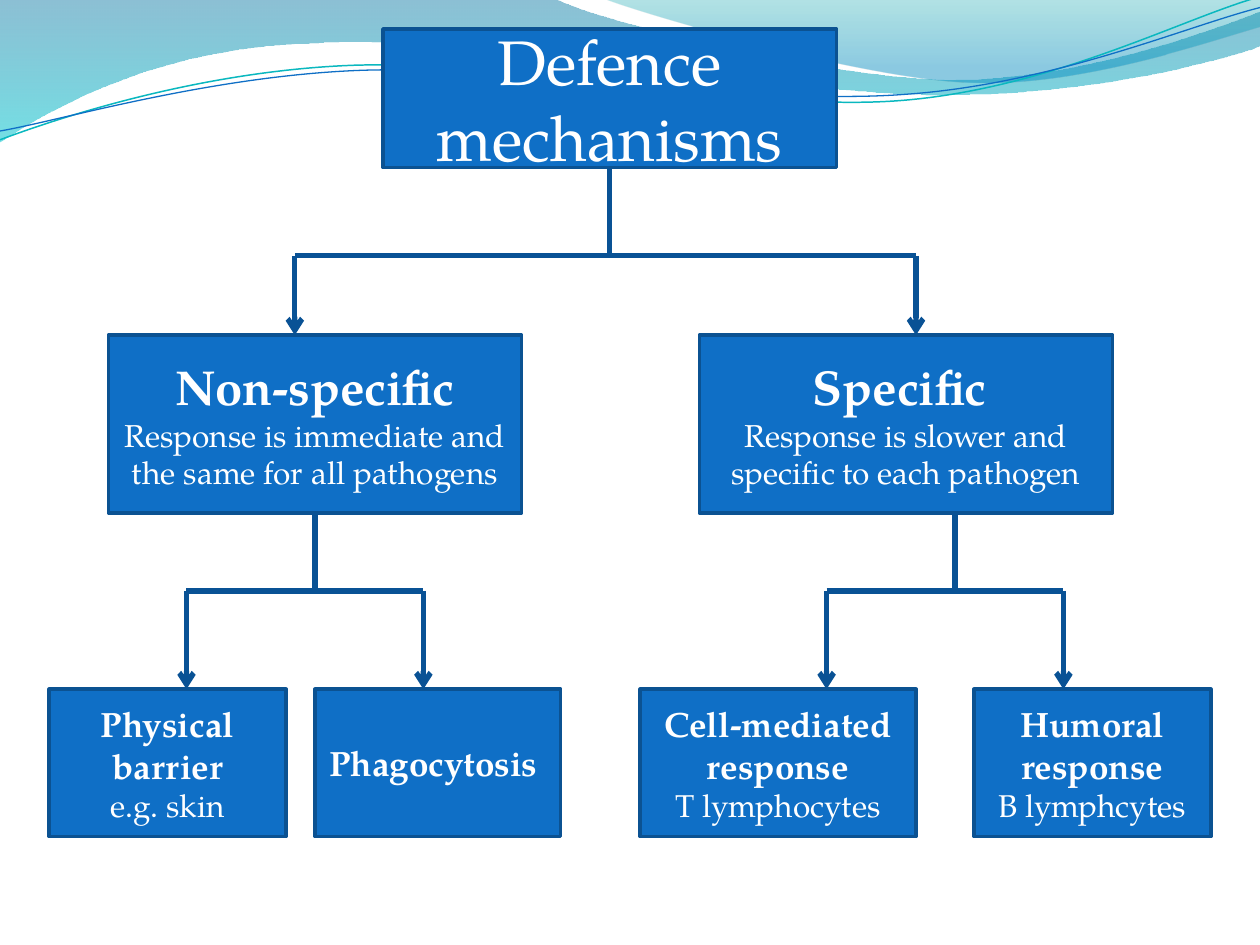
from lxml import etree
from pptx import Presentation
from pptx.dml.color import RGBColor
from pptx.enum.shapes import MSO_CONNECTOR, MSO_SHAPE
from pptx.enum.text import MSO_ANCHOR, PP_ALIGN
from pptx.oxml.ns import qn
from pptx.util import Inches, Pt

PROCESS = MSO_SHAPE.FLOWCHART_PROCESS
STRAIGHT = MSO_CONNECTOR.STRAIGHT
MIDDLE = MSO_ANCHOR.MIDDLE
CENTER = PP_ALIGN.CENTER

FONT = "TeX Gyre Pagella"
COLORS = {
    "box": "0F6FC6", "border": "0B5292", "arrow": "095295", "text": "FFFFFF",
    "teal line": "0AB8BF", "blue line": "0F6FC6",
    "deep blue": "0074A1", "cyan": "00C6CF", "teal": "00A1A9", "sky": "008BBF",
}

FILLED_WAVES = [
    ([(0, 0), (4.4, -0.01),
      (4.76, 0.17, 6.64, 0.63, 7.58, 0.63), (8.53, 0.63, 9.58, 0.26, 10, 0.09),
      (10.01, 0.36),
      (9.83, 0.44, 8.7, 0.76, 7.46, 0.75), (6.22, 0.75, 3.82, 0.28, 2.57, 0.34),
      (1.29, 0.36, 0.46, 0.83, -0.01, 1.13)],
     [(0, "deep blue", 45), (1, "cyan", 55)]),
    ([(4.79, -0.01),
      (5.09, 0.11, 6.82, 0.62, 7.69, 0.65), (8.56, 0.69, 9.61, 0.32, 10, 0.21),
      (10, 0)],
     [(0, "teal", 30), (0.8, "sky", 45)]),
]
LINE_WAVES = [
    ([(0, 1.11), (0.48, 0.93, 1.58, 0.57, 2.77, 0.52),
      (3.95, 0.47, 5.93, 0.89, 7.13, 0.8), (8.33, 0.71, 9.38, 0.15, 9.98, -0.02)],
     "teal line", 0.85),
    ([(0, 1.04), (0.47, 0.96, 1.64, 0.61, 2.83, 0.56),
      (4.03, 0.51, 5.97, 0.84, 7.17, 0.75), (8.36, 0.67, 9.41, 0.21, 10, 0.06)],
     "blue line", 0.75),
]

LEVELS = {
    "root": {"top": 0.23, "height": 1.1, "size": 36, "bold": False},
    "branch": {"top": 2.66, "height": 1.41, "size": 28, "bold": True},
    "leaf": {"top": 5.47, "height": 1.17, "size": 20, "bold": True},
}
DETAIL_SIZE = 18
BOXES = [
    ("root", 3.04, 3.6, "Defence mechanisms", ""),
    ("branch", 0.86, 3.28, "Non-specific",
     "Response is immediate and the same for all pathogens"),
    ("branch", 5.55, 3.28, "Specific ",
     "Response is slower and specific to each pathogen"),
    ("leaf", 0.39, 1.88, "Physical barrier", "e.g. skin"),
    ("leaf", 2.5, 1.95, "Phagocytosis ", ""),
    ("leaf", 5.08, 2.19, "Cell-mediated response", "T lymphocytes"),
    ("leaf", 7.73, 1.88, "Humoral response", "B lymphcytes"),
]
FORKS = [
    {"parent": "Defence mechanisms", "trunk": 4.84, "bar": 2.03,
     "arms": (2.34, 7.27), "children": "branch"},
    {"parent": "Non-specific", "trunk": 2.5, "bar": 4.69,
     "arms": (1.48, 3.36), "children": "leaf"},
    {"parent": "Specific ", "trunk": 7.58, "bar": 4.69,
     "arms": (6.56, 8.44), "children": "leaf"},
]


def color(name):
    return RGBColor.from_string(COLORS[name])


def add_wave(slide, segments, close):
    anchors = [(Inches(segment[-2]), Inches(segment[-1])) for segment in segments]
    builder = slide.shapes.build_freeform(*anchors[0])
    builder.add_line_segments(anchors[1:], close=close)
    shape = builder.convert_to_shape()
    shape.shadow.inherit = False
    straight_steps = list(shape._element.spPr.iter(qn("a:lnTo")))
    for step, segment in zip(straight_steps, segments[1:]):
        if len(segment) == 2:
            continue
        curve = etree.Element(qn("a:cubicBezTo"))
        for x, y in zip(segment[::2], segment[1::2]):
            point = etree.SubElement(curve, qn("a:pt"))
            point.set("x", str(Inches(x) - shape.left))
            point.set("y", str(Inches(y) - shape.top))
        step.getparent().replace(step, curve)
    return shape


def add_filled_wave(slide, segments, stops):
    shape = add_wave(slide, segments, True)
    shape.line.fill.background()
    shape.fill.gradient()
    shape.fill.gradient_angle = 270
    for stop, (position, name, _) in zip(shape.fill.gradient_stops, stops):
        stop.position = position
        stop.color.rgb = color(name)
    tints = shape._element.spPr.iter(qn("a:srgbClr"))
    for tint, (_, _, opacity) in zip(tints, stops):
        etree.SubElement(tint, qn("a:alpha")).set("val", str(opacity * 1000))


def add_line_wave(slide, segments, name, width):
    shape = add_wave(slide, segments, False)
    shape.fill.background()
    shape.line.color.rgb = color(name)
    shape.line.width = Pt(width)


def add_box(slide, level, left, width, heading, detail):
    style = LEVELS[level]
    shape = slide.shapes.add_shape(
        PROCESS, Inches(left), Inches(style["top"]), Inches(width), Inches(style["height"]))
    shape.shadow.inherit = False
    shape.fill.solid()
    shape.fill.fore_color.rgb = color("box")
    shape.line.color.rgb = color("border")
    shape.line.width = Pt(2)
    frame = shape.text_frame
    frame.word_wrap = True
    frame.vertical_anchor = MIDDLE
    frame.text = f"{heading}\n{detail}" if detail else heading
    formats = [(style["size"], style["bold"]), (DETAIL_SIZE, False)]
    for paragraph, (size, bold) in zip(frame.paragraphs, formats):
        paragraph.alignment = CENTER
        font = paragraph.runs[0].font
        font.name = FONT
        font.size = Pt(size)
        font.bold = bold
        font.color.rgb = color("text")
    return shape


def add_line(group, start, end, arrow=False):
    connector = group.shapes.add_connector(STRAIGHT, *map(Inches, start + end))
    connector.line.color.rgb = color("arrow")
    connector.line.width = Pt(3)
    if arrow:
        line = connector.line._get_or_add_ln()
        etree.SubElement(line, qn("a:tailEnd")).set("type", "arrow")
    etree.SubElement(connector._element.spPr, qn("a:effectLst"))
    return connector


def add_fork(slide, fork, boxes):
    group = slide.shapes.add_group_shape()
    parent = boxes[fork["parent"]]
    left, right = fork["arms"]
    bar, trunk = fork["bar"], fork["trunk"]
    add_line(group, (left, bar), (right, bar))
    bottom = (parent.top + parent.height) / Inches(1)
    stem = add_line(group, (trunk, bottom), (trunk, bar))
    if abs(parent.left + parent.width / 2 - Inches(trunk)) < Inches(0.01):
        stem.begin_connect(parent, 2)
    for arm in fork["arms"]:
        add_line(group, (arm, bar), (arm, LEVELS[fork["children"]]["top"]), arrow=True)


def main():
    presentation = Presentation()
    presentation.slide_width = Inches(10)
    presentation.slide_height = Inches(7.5)
    slide = presentation.slides.add_slide(presentation.slide_layouts[6])
    for wave in FILLED_WAVES:
        add_filled_wave(slide, *wave)
    for wave in LINE_WAVES:
        add_line_wave(slide, *wave)
    boxes = {box[3]: add_box(slide, *box) for box in BOXES}
    for fork in FORKS:
        add_fork(slide, fork, boxes)
    presentation.save("out.pptx")


if __name__ == "__main__":
    main()
